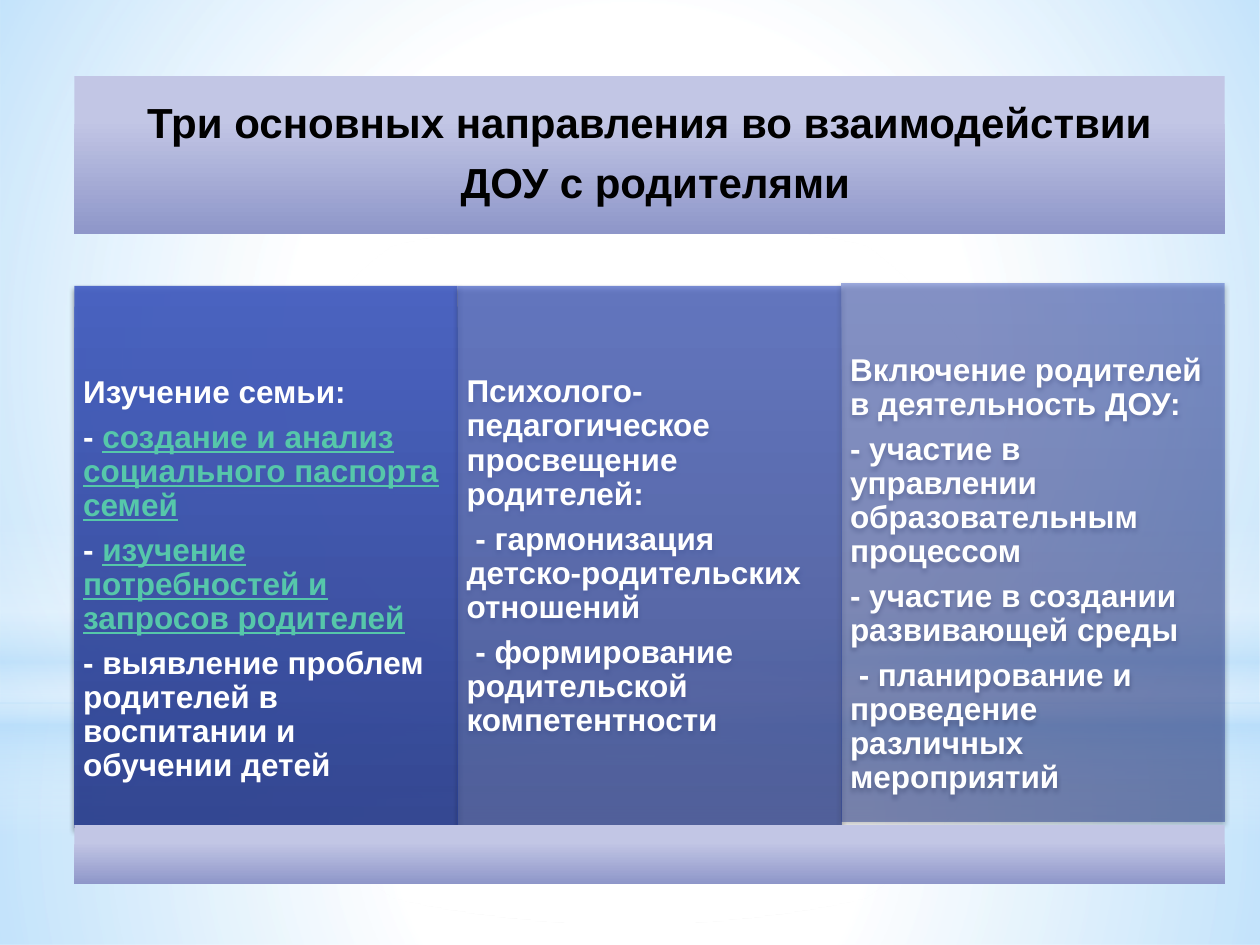
from dataclasses import dataclass

from lxml.etree import SubElement
from pptx import Presentation
from pptx.dml.color import RGBColor
from pptx.enum.shapes import MSO_SHAPE as Preset
from pptx.enum.text import MSO_ANCHOR as Anchor, PP_ALIGN as Align
from pptx.oxml.ns import qn
from pptx.util import Inches, Pt

WHITE = RGBColor(0xFF, 0xFF, 0xFF)
BLACK = RGBColor(0x00, 0x00, 0x00)
SKY = RGBColor(0xB4, 0xDC, 0xFA)
LILAC = RGBColor(0xC2, 0xC6, 0xE5)
VIOLET = RGBColor(0x8E, 0x96, 0xC9)
BLUE = RGBColor(0x43, 0x5E, 0xC5)
NAVY = RGBColor(0x2B, 0x40, 0x92)
MINT = RGBColor(0x56, 0xC7, 0xAA)

BAND = [(28, LILAC, 100), (100, VIOLET, 100)]
TITLE = ["Три основных направления во взаимодействии", " ДОУ с родителями"]
COLUMNS = [
    (90, 0.36, [
        "Изучение семьи:",
        ("- ", "создание и анализ социального паспорта семей"),
        ("- ", "изучение потребностей и запросов родителей"),
        "- выявление проблем родителей в воспитании и обучении детей",
    ]),
    (70, 0, [
        "Психолого-педагогическое просвещение родителей:",
        " - гармонизация детско-родительских отношений",
        " - формирование родительской компетентности",
    ]),
    (50, 0.36, [
        "Включение родителей в деятельность ДОУ:",
        "- участие в управлении образовательным процессом",
        "- участие в создании развивающей среды",
        " - планирование и проведение различных мероприятий",
    ]),
]


@dataclass
class Box:
    """A rectangle in inches."""
    left: float
    top: float
    width: float
    height: float

    def inner(self, left, top, width, height):
        """Return the inner box given as shares of this one."""
        return Box(self.left + left * self.width, self.top + top * self.height,
                   width * self.width, height * self.height)


def add_color(parent, color, opacity):
    """Append a colour with its opacity in percent."""
    element = SubElement(parent, qn("a:srgbClr"), val=str(color))
    SubElement(element, qn("a:alpha"), val=str(opacity * 1000))


def add_panel(slide, box, stops, preset=Preset.RECTANGLE, radial=False, shadow=False):
    """Draw a borderless shape with a downward or radial gradient."""
    shape = slide.shapes.add_shape(preset, *map(Inches, (box.left, box.top, box.width, box.height)))
    shape.line.fill.background()
    shape.shadow.inherit = False
    shape.fill.background()
    properties = shape.element.spPr
    gradient = SubElement(properties, qn("a:gradFill"), rotWithShape="1")
    properties.replace(properties.find(qn("a:noFill")), gradient)
    stop_list = SubElement(gradient, qn("a:gsLst"))
    for position, color, opacity in stops:
        add_color(SubElement(stop_list, qn("a:gs"), pos=str(position * 1000)), color, opacity)
    if radial:
        center = SubElement(gradient, qn("a:path"), {"path": "circle"})
        SubElement(center, qn("a:fillToRect"), {side: "50000" for side in "ltrb"})
    else:
        SubElement(gradient, qn("a:lin"), ang="5400000", scaled="0")
    if shadow:
        outer = SubElement(properties.find(qn("a:effectLst")), qn("a:outerShdw"),
                           blurRad=str(Pt(3.1)), dist=str(Pt(1.8)), dir="5400000", rotWithShape="0")
        add_color(outer, BLACK, 45)
    return shape


def add_text(shape, lines, size, color, align=Align.LEFT, inset=0.07, extra_top=0):
    """Write bold paragraphs; the second string of a pair is a linked phrase."""
    frame = shape.text_frame
    frame.word_wrap = True
    frame.vertical_anchor = Anchor.MIDDLE
    frame.margin_left = frame.margin_right = frame.margin_bottom = Inches(inset)
    frame.margin_top = Inches(inset + extra_top)
    for index, line in enumerate(lines):
        paragraph = frame.paragraphs[0] if index == 0 else frame.add_paragraph()
        paragraph.alignment = align
        paragraph.line_spacing = 0.9
        paragraph.space_after = Pt(size * 0.35)
        phrases = (line,) if isinstance(line, str) else line
        for order, text in enumerate(phrases):
            run = paragraph.add_run()
            run.text = text
            run.font.name = "Arial"
            run.font.size = Pt(size)
            run.font.bold = True
            run.font.underline = order == 1
            run.font.color.rgb = MINT if order else color


def add_backdrop(slide, box):
    """Draw the pale sky behind the content."""
    add_panel(slide, box.inner(0, 0.744, 1, 0.256),
              [(0, WHITE, 91), (37, WHITE, 76), (100, SKY, 79)], radial=True)
    add_panel(slide, box.inner(0, 0, 1, 0.744),
              [(0, WHITE, 89), (48, WHITE, 62), (100, SKY, 79)], radial=True)
    add_panel(slide, box.inner(0, 0.55, 1, 0.333),
              [(0, WHITE, 0), (29, WHITE, 30), (45, SKY, 40),
               (55, WHITE, 26), (65, SKY, 60), (100, WHITE, 0)])
    add_panel(slide, box.inner(0, 0.233, 1, 0.744),
              [(0, WHITE, 100), (56, WHITE, 0)], Preset.OVAL, radial=True)


def add_title(slide, box):
    """Draw the title band."""
    add_text(add_panel(slide, box, BAND), TITLE, 24, BLACK, Align.CENTER, inset=0.1)


def add_columns(slide, box):
    """Draw equal columns, the last one slightly raised."""
    width = 1 / len(COLUMNS)
    for index, (opacity, extra_top, lines) in enumerate(COLUMNS):
        last = index == len(COLUMNS) - 1
        top, height = (-0.005, 0.993) if last else (0, 1)
        column = add_panel(slide, box.inner(index * width, top, width, height),
                           [(0, BLUE, opacity), (100, NAVY, opacity)], shadow=True)
        add_text(column, lines, 18, WHITE, extra_top=extra_top)


def main():
    """Build and save the slide."""
    presentation = Presentation()
    presentation.slide_width, presentation.slide_height = Inches(10), Inches(7.5)
    slide = presentation.slides.add_slide(presentation.slide_layouts[6])
    page = Box(0, 0, 10, 7.5)
    content = page.inner(0.059, 0.08, 0.913, 0.856)
    add_backdrop(slide, page)
    add_title(slide, content.inner(0, 0, 1, 0.196))
    add_columns(slide, content.inner(0, 0.26, 1, 0.67))
    add_panel(slide, content.inner(0, 0.927, 1, 0.073), BAND)
    presentation.save("out.pptx")


if __name__ == "__main__":
    main()
